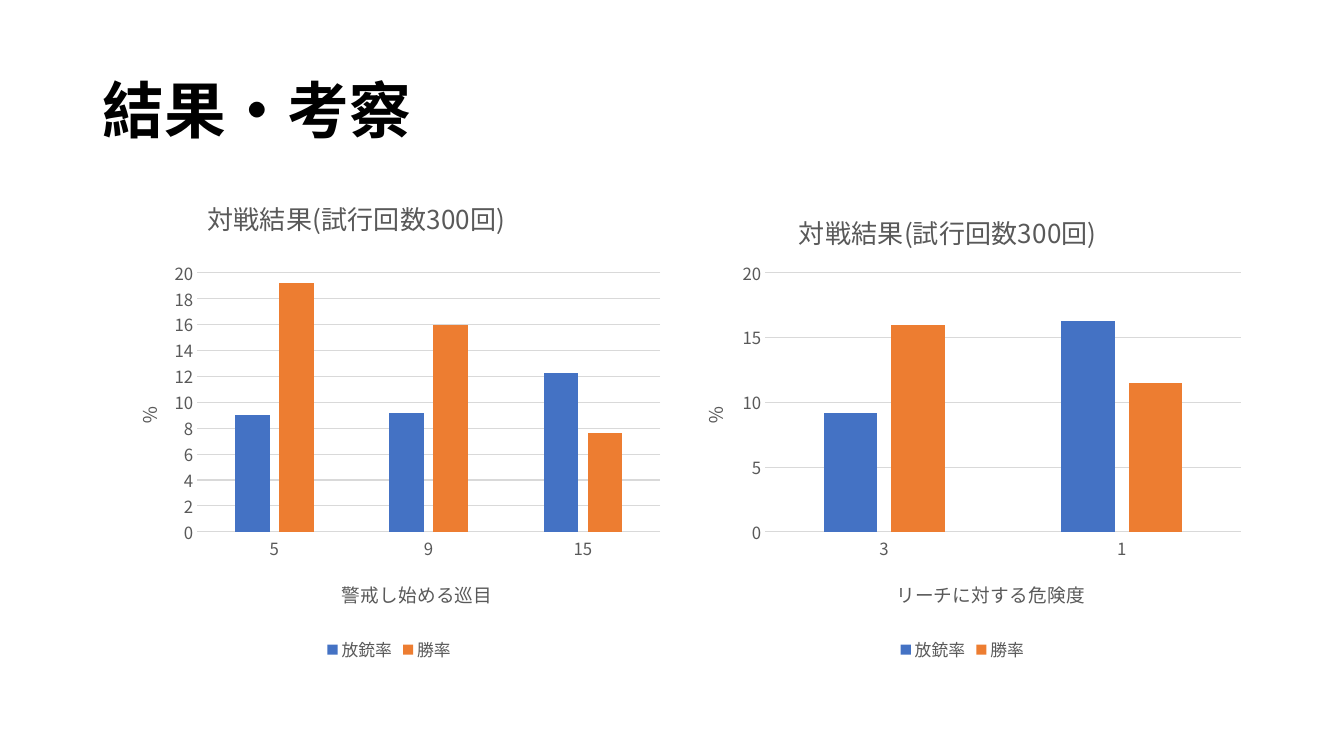
"""Builds a results slide with two clustered column charts."""
from lxml import etree
from pptx import Presentation
from pptx import util as u
from pptx.chart.data import CategoryChartData
from pptx.dml.color import RGBColor
from pptx.enum import chart as ch, text
from pptx.oxml.ns import qn

THEME = {
    "font": "Noto Sans CJK JP",
    "black": "000000", "gray": "595959", "grid": "D9D9D9",
    "series": ["4472C4", "ED7D31"],
    "title": 44, "chart": 18.6, "axis": 13.3, "label": 12,
}
TOP, HEIGHT = 1.85, 4.76
CHARTS = [
    {"left": 1.06, "width": 5.6, "cats": ["5", "9", "15"], "step": 2,
     "axis": "警戒し始める巡目", "title_at": (0.17, 0.01), "axis_at": (0.41, 0.81),
     "放銃率": (9, 9.2, 12.3), "勝率": (19.2, 16, 7.6)},
    {"left": 6.67, "width": 5.75, "cats": ["3", "1"], "step": 5,
     "axis": "リーチに対する危険度", "title_at": (0.21, 0.04), "axis_at": (0.38, 0.81),
     "放銃率": (9.2, 16.3), "勝率": (16, 11.5)},
]


def style(font, size, color, bold=False):
    """Formats Latin and East Asian text alike."""
    font.size, font.bold, font.name = u.Pt(size), bold, THEME["font"]
    font.color.rgb = RGBColor.from_string(color)
    latin = font._rPr.find(qn("a:latin"))
    ea = latin.makeelement(qn("a:ea"), {"typeface": THEME["font"]})
    latin.addnext(ea)


def place(parent, index, **values):
    """Puts a chart part at shares of the chart's size."""
    for old in parent.findall(qn("c:layout")):
        parent.remove(old)
    layout = parent.makeelement(qn("c:layout"), {})
    parent.insert(index, layout)
    manual = etree.SubElement(layout, qn("c:manualLayout"))
    for name, value in values.items():
        etree.SubElement(manual, qn("c:" + name), val=str(value))


prs = Presentation()
prs.slide_width, prs.slide_height = u.Inches(13.33), u.Inches(7.5)
s = prs.slides.add_slide(prs.slide_layouts[5])

sp = s.shapes.title
sp.left, sp.top, sp.width, sp.height = map(u.Inches, (0.92, 0.4, 11.5, 1.45))
tf = sp.text_frame
tf.text = "結果・考察"
tf.vertical_anchor = text.MSO_ANCHOR.MIDDLE
p = tf.paragraphs[0]
p.alignment, p.line_spacing = text.PP_ALIGN.LEFT, 0.9
style(p.runs[0].font, THEME["title"], THEME["black"], True)

for spec_row in CHARTS:
    data = CategoryChartData()
    data.categories = spec_row["cats"]
    for name in ("放銃率", "勝率"):
        data.add_series(name, spec_row[name])
    frame = s.shapes.add_chart(
        ch.XL_CHART_TYPE.COLUMN_CLUSTERED, u.Inches(spec_row["left"]), u.Inches(TOP),
        u.Inches(spec_row["width"]), u.Inches(HEIGHT), data)
    chart = frame.chart
    style(chart.font, 10, THEME["black"])
    plot = chart.plots[0]
    plot.gap_width, plot.overlap, plot.vary_by_categories = 219, -27, False
    for series, color in zip(plot.series, THEME["series"]):
        series.format.fill.solid()
        series.format.fill.fore_color.rgb = RGBColor.from_string(color)
        series.invert_if_negative = False

    cat, val = chart.category_axis, chart.value_axis
    for axis in (cat, val):
        axis.major_tick_mark = axis.minor_tick_mark = ch.XL_TICK_MARK.NONE
        style(axis.tick_labels.font, THEME["label"], THEME["gray"])
    val.minimum_scale, val.maximum_scale = 0, 20
    val.major_unit = spec_row["step"]
    val.format.line.fill.background()
    for line in (cat.format.line, val.major_gridlines.format.line):
        line.color.rgb = RGBColor.from_string(THEME["grid"])
        line.width = u.Pt(0.75)

    for owner, words, size, at in (
            (chart, "対戦結果(試行回数300回)", THEME["chart"], spec_row["title_at"]),
            (cat, spec_row["axis"], THEME["axis"], spec_row["axis_at"]),
            (val, "％", THEME["axis"], (0.04, 0.45))):
        title = owner.chart_title if owner is chart else owner.axis_title
        tf = title.text_frame
        tf.text = words
        style(tf.paragraphs[0].runs[0].font, size, THEME["gray"])
        place(title._element, 1, xMode="edge", yMode="edge", x=at[0], y=at[1])
    tf._txBody.find(qn("a:bodyPr")).set("rot", "-5400000")

    chart.has_legend = True
    chart.legend.position = ch.XL_LEGEND_POSITION.BOTTOM
    chart.legend.include_in_layout = False
    style(chart.legend.font, THEME["label"], THEME["gray"])
    place(chart._chartSpace.chart.plotArea, 0, layoutTarget="inner",
          xMode="edge", yMode="edge", x=0.16, y=0.18, w=0.82, h=0.54)

prs.save("out.pptx")
